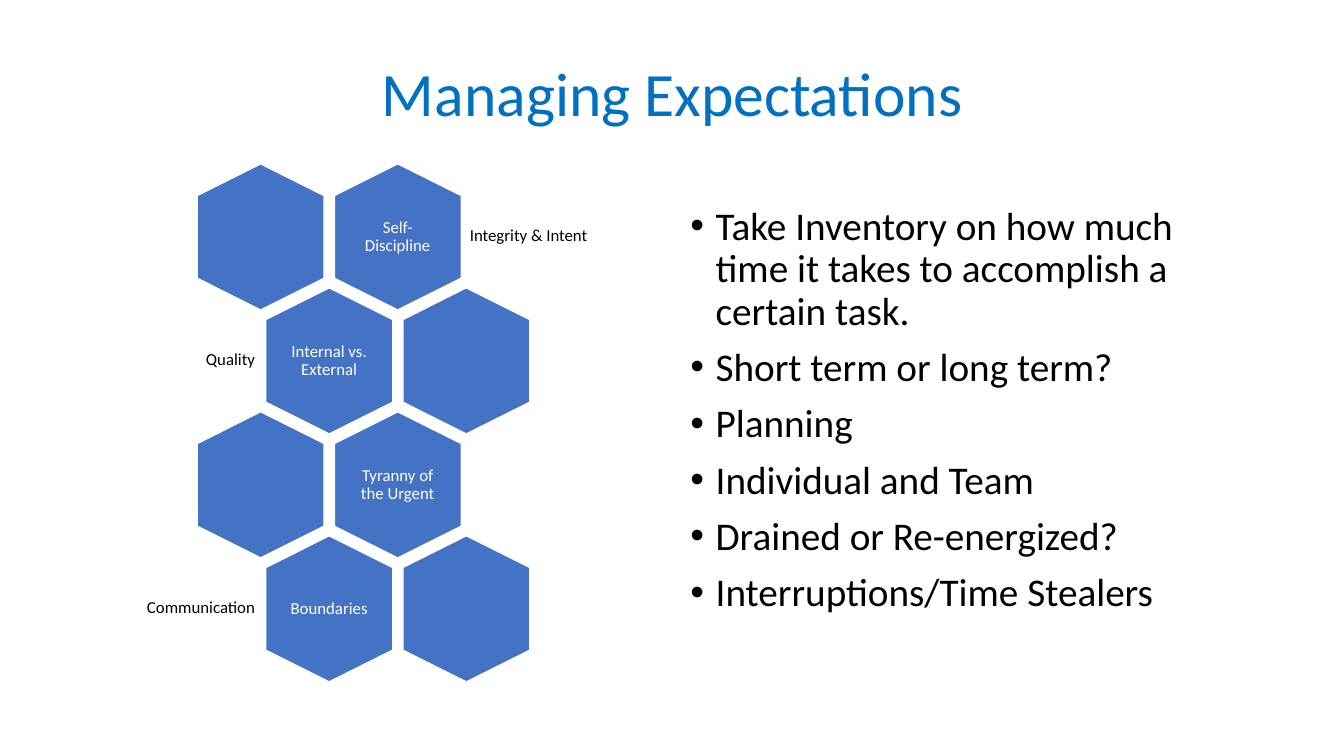
from dataclasses import dataclass

from lxml import etree
from pptx import Presentation
from pptx.dml.color import RGBColor
from pptx.enum import shapes, text
from pptx.oxml import ns
from pptx.util import Inches, Pt


@dataclass(frozen=True)
class Theme:
    font: str = "Calibri"
    title_color: str = "0070C0"
    hexagon_color: str = "4472C4"
    light: str = "FFFFFF"
    dark: str = "000000"
    title_size: int = 44
    bullet_size: int = 28
    label_size: int = 12


LEFT, CENTER, RIGHT = text.PP_ALIGN.LEFT, text.PP_ALIGN.CENTER, text.PP_ALIGN.RIGHT
MIDDLE, TOP = text.MSO_ANCHOR.MIDDLE, text.MSO_ANCHOR.TOP

HEX_WIDTH, HEX_HEIGHT = 1.45, 1.26
HEX_LEFT, HEX_TOP = 1.86, 1.72
COLUMN_STEP, ROW_STEP = 1.36, 1.23

# Each row: labels of its two hexagons, then the caption beside them
HONEYCOMB = [
    (("", "Self-Discipline"), "Integrity & Intent"),
    (("Internal vs. External", ""), "Quality"),
    (("", "Tyranny of the Urgent"), ""),
    (("Boundaries", ""), "Communication"),
]
BULLETS = [
    "Take Inventory on how much time it takes to accomplish a certain task.",
    "Short term or long term?",
    "Planning",
    "Individual and Team",
    "Drained or Re-energized?",
    "Interruptions/Time Stealers",
]


class SlideBuilder:
    def __init__(self, slide, theme):
        self.slide = slide
        self.theme = theme

    def fill_paragraph(self, paragraph, content, size, color, align):
        paragraph.alignment = align
        paragraph.line_spacing = 0.9
        run = paragraph.add_run()
        run.text = content
        for name, value in {"name": self.theme.font, "size": Pt(size)}.items():
            setattr(run.font, name, value)
        run.font.color.rgb = RGBColor.from_string(color)

    def frame(self, shape, anchor, margin=None):
        frame = shape.text_frame
        settings = {"word_wrap": True, "vertical_anchor": anchor}
        if margin is not None:
            for side in ("left", "top", "right", "bottom"):
                settings[f"margin_{side}"] = Inches(margin)
        for name, value in settings.items():
            setattr(frame, name, value)
        return frame

    def title(self, content, *box):
        title = self.slide.shapes.title
        for name, value in zip(("left", "top", "width", "height"), box):
            setattr(title, name, Inches(value))
        frame = self.frame(title, MIDDLE)
        self.fill_paragraph(frame.paragraphs[0], content, self.theme.title_size,
                            self.theme.title_color, CENTER)

    def hexagon(self, left, top):
        shape = self.slide.shapes.add_shape(
            shapes.MSO_SHAPE.HEXAGON, Inches(left), Inches(top),
            Inches(HEX_WIDTH), Inches(HEX_HEIGHT))
        shape.rotation = 90
        shape.shadow.inherit = False
        shape.fill.solid()
        shape.fill.fore_color.rgb = RGBColor.from_string(self.theme.hexagon_color)
        shape.line.color.rgb = RGBColor.from_string(self.theme.light)
        shape.line.width = Pt(1)

    def label(self, content, box, color, align):
        shape = self.slide.shapes.add_textbox(*map(Inches, box))
        frame = self.frame(shape, MIDDLE, 0.05)
        self.fill_paragraph(frame.paragraphs[0], content, self.theme.label_size,
                            color, align)

    def bullets(self, items, *box):
        shape = self.slide.shapes.add_textbox(*map(Inches, box))
        frame = self.frame(shape, TOP)
        for index, item in enumerate(items):
            paragraph = frame.add_paragraph() if index else frame.paragraphs[0]
            self.fill_paragraph(paragraph, item, self.theme.bullet_size,
                                self.theme.dark, LEFT)
            paragraph.space_before = Pt(10)
            properties = paragraph._p.get_or_add_pPr()
            properties.set("marL", str(Inches(0.25)))
            properties.set("indent", str(-Inches(0.25)))
            etree.SubElement(properties, ns.qn("a:buFont")).set("typeface", "Arial")
            etree.SubElement(properties, ns.qn("a:buChar")).set("char", "•")

    def honeycomb(self, rows):
        """Odd rows shift right by half a column and carry their caption on the left."""
        for row, (labels, caption) in enumerate(rows):
            shifted = row % 2
            top = HEX_TOP + row * ROW_STEP
            for column, content in enumerate(labels):
                left = HEX_LEFT + (column + shifted / 2) * COLUMN_STEP
                self.hexagon(left, top)
                if content:
                    self.label(content, (left + 0.29, top + 0.13, 0.87, 1),
                               self.theme.light, CENTER)
            if caption:
                left, width, align = (1.02, 1.56, RIGHT) if shifted else (4.61, 1.61, LEFT)
                self.label(caption, (left, top + 0.19, width, 0.87),
                           self.theme.dark, align)


def main():
    presentation = Presentation()
    presentation.slide_width = Inches(13.33)
    presentation.slide_height = Inches(7.5)
    title_only = presentation.slide_layouts[5]
    builder = SlideBuilder(presentation.slides.add_slide(title_only), Theme())
    builder.title("Managing Expectations", 0.92, 0.4, 11.5, 1.12)
    builder.honeycomb(HONEYCOMB)
    builder.bullets(BULLETS, 6.75, 2, 5.67, 4.76)
    presentation.save("out.pptx")


if __name__ == "__main__":
    main()
